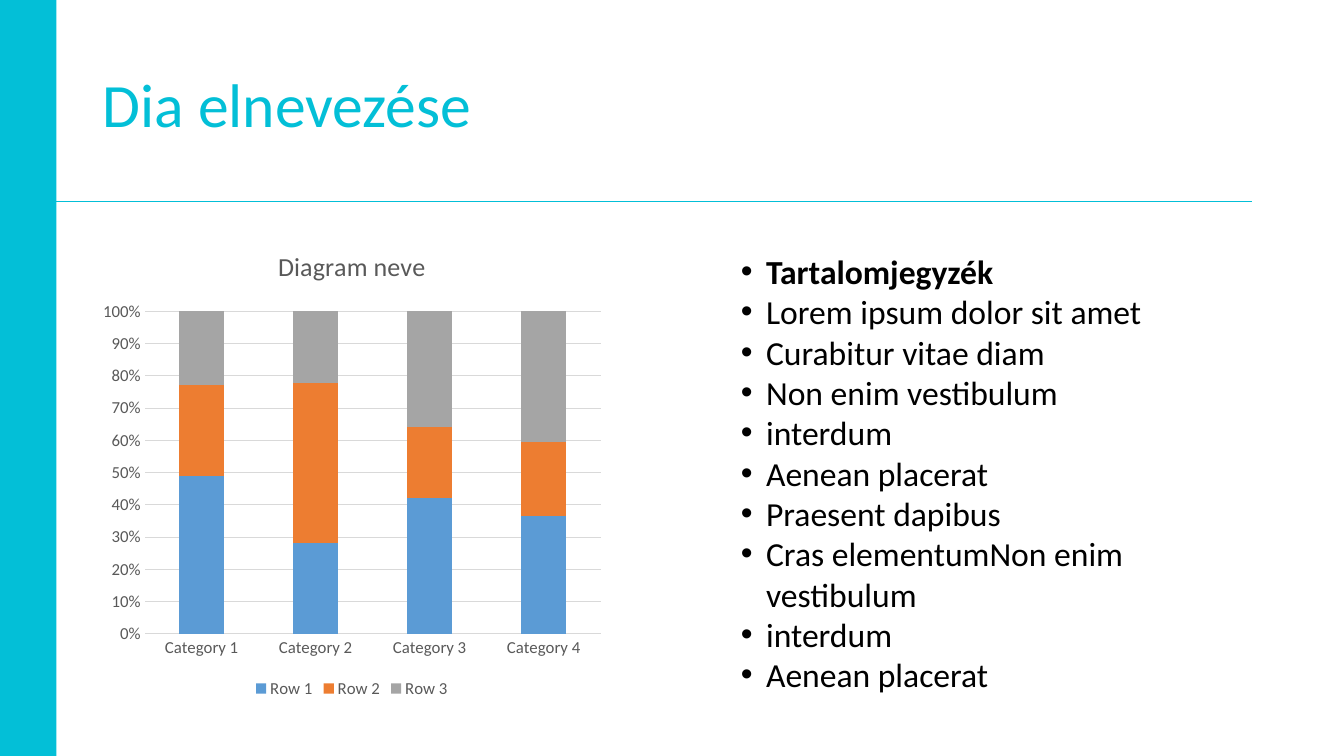
from dataclasses import dataclass

from lxml import etree
from pptx import Presentation
from pptx.chart.data import CategoryChartData
from pptx.dml.color import RGBColor
from pptx.enum.chart import XL_CHART_TYPE, XL_LEGEND_POSITION, XL_TICK_MARK
from pptx.enum.shapes import MSO_CONNECTOR, MSO_SHAPE
from pptx.enum.text import MSO_ANCHOR
from pptx.oxml.ns import qn
from pptx.util import Inches, Pt

STACKED = XL_CHART_TYPE.COLUMN_STACKED_100
BOTTOM = XL_LEGEND_POSITION.BOTTOM
NO_TICK = XL_TICK_MARK.NONE
STRAIGHT = MSO_CONNECTOR.STRAIGHT
RECTANGLE = MSO_SHAPE.RECTANGLE
MIDDLE, TOP = MSO_ANCHOR.MIDDLE, MSO_ANCHOR.TOP


@dataclass(frozen=True)
class Theme:
    font: str = "Calibri"
    accent: str = "03BFD7"
    text: str = "000000"
    chart_text: str = "595959"
    grid: str = "D9D9D9"
    series: tuple = ("5B9BD5", "ED7D31", "A5A5A5")
    title_size: float = 44
    body_size: float = 24
    chart_title_size: float = 18.6
    label_size: float = 12


CONTENTS = [
    "Tartalomjegyzék",
    "Lorem ipsum dolor sit amet",
    "Curabitur vitae diam",
    "Non enim vestibulum",
    "interdum",
    "Aenean placerat",
    "Praesent dapibus",
    "Cras elementumNon enim vestibulum",
    "interdum",
    "Aenean placerat",
]
CATEGORIES = [f"Category {number}" for number in range(1, 5)]
ROWS = {
    "Row 1": (49, 28, 42, 37),
    "Row 2": (28, 49, 22, 23),
    "Row 3": (23, 22, 36, 41),
}


def set_format(target, values):
    for name, value in values.items():
        setattr(target, name, value)


class SlideBuilder:
    def __init__(self, slide, theme):
        self.slide = slide
        self.theme = theme

    def style_font(self, font, size, color, bold=False):
        set_format(font, {"name": self.theme.font, "size": Pt(size), "bold": bold})
        font.color.rgb = RGBColor.from_string(color)

    def bar(self, *box, color):
        shape = self.slide.shapes.add_shape(RECTANGLE, *map(Inches, box))
        shape.shadow.inherit = False
        shape.fill.solid()
        shape.fill.fore_color.rgb = RGBColor.from_string(color)
        shape.line.fill.background()

    def rule(self, *ends, color, width):
        connector = self.slide.shapes.add_connector(STRAIGHT, *map(Inches, ends))
        connector.line.color.rgb = RGBColor.from_string(color)
        connector.line.width = Pt(width)
        etree.SubElement(connector._element.spPr, qn("a:effectLst"))

    def text(self, lines, *box, size, color, anchor=TOP, spacing=1.0,
             bullets=False, bold_first=False):
        frame = self.slide.shapes.add_textbox(*map(Inches, box)).text_frame
        set_format(frame, {"word_wrap": True, "vertical_anchor": anchor})
        for index, line in enumerate(lines):
            paragraph = frame.add_paragraph() if index else frame.paragraphs[0]
            if bullets:
                self.bullet(paragraph)
            paragraph.line_spacing = spacing
            run = paragraph.add_run()
            run.text = line
            self.style_font(run.font, size, color, bold_first and index == 0)

    def bullet(self, paragraph):
        properties = paragraph._p.get_or_add_pPr()
        properties.set("marL", str(Inches(0.25)))
        properties.set("indent", str(Inches(-0.25)))
        etree.SubElement(properties, qn("a:buFont"), typeface="Arial")
        etree.SubElement(properties, qn("a:buChar"), char="•")

    def stacked_chart(self, title, categories, rows, *box):
        theme = self.theme
        data = CategoryChartData(number_format="0")
        data.categories = categories
        for name, values in rows.items():
            data.add_series(name, values)
        chart = self.slide.shapes.add_chart(STACKED, *map(Inches, box), data).chart
        self.style_font(chart.font, theme.label_size, theme.chart_text)

        # Title and legend
        title_frame = chart.chart_title.text_frame
        title_frame.text = title
        title_font = title_frame.paragraphs[0].runs[0].font
        self.style_font(title_font, theme.chart_title_size, theme.chart_text)
        chart.has_legend = True
        set_format(chart.legend, {"position": BOTTOM, "include_in_layout": False})
        self.style_font(chart.legend.font, theme.label_size, theme.chart_text)

        # Axes and grid
        for axis in (chart.category_axis, chart.value_axis):
            set_format(axis, {"major_tick_mark": NO_TICK, "minor_tick_mark": NO_TICK})
            axis.format.line.fill.background()
            self.style_font(axis.tick_labels.font, theme.label_size, theme.chart_text)
        value_axis = chart.value_axis
        set_format(value_axis, {"minimum_scale": 0, "maximum_scale": 1,
                                "major_unit": 0.1, "has_major_gridlines": True})
        set_format(value_axis.tick_labels,
                   {"number_format": "0%", "number_format_is_linked": False})
        grid_line = value_axis.major_gridlines.format.line
        grid_line.color.rgb = RGBColor.from_string(theme.grid)
        grid_line.width = Pt(0.75)

        # Columns
        plot = chart.plots[0]
        set_format(plot, {"gap_width": 150, "overlap": 100, "vary_by_categories": False})
        for series, color in zip(plot.series, theme.series):
            series.format.fill.solid()
            series.format.fill.fore_color.rgb = RGBColor.from_string(color)


def main():
    presentation = Presentation()
    set_format(presentation, {"slide_width": Inches(13.33), "slide_height": Inches(7.5)})
    theme = Theme()
    slide = presentation.slides.add_slide(presentation.slide_layouts[6])
    builder = SlideBuilder(slide, theme)

    # Side bar, heading and rule
    builder.bar(0, 0, 0.56, 7.5, color=theme.accent)
    builder.text(["Dia elnevezése"], 0.92, 0.34, 9.17, 1.45, size=theme.title_size,
                 color=theme.accent, anchor=MIDDLE, spacing=0.9)
    builder.rule(0, 2, 12.42, 2, color=theme.accent, width=0.5)

    # Contents list and chart
    builder.text(CONTENTS, 7.25, 2.44, 5.17, 4.35, size=theme.body_size,
                 color=theme.text, bullets=True, bold_first=True)
    builder.stacked_chart("Diagram neve", CATEGORIES, ROWS, 0.92, 2.27, 5.14, 4.7)

    presentation.save("out.pptx")


if __name__ == "__main__":
    main()
